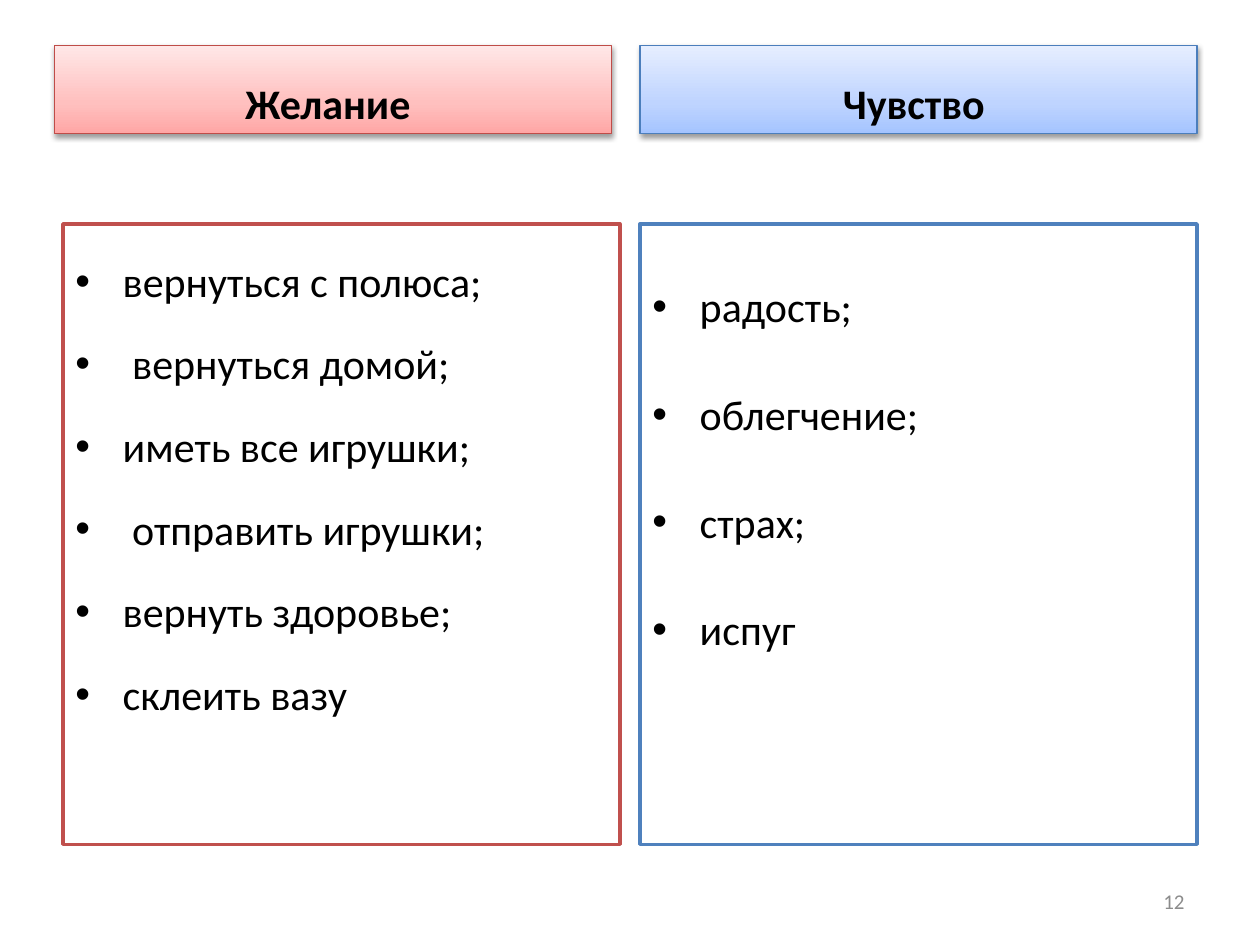
from copy import deepcopy

from lxml.etree import SubElement
from pptx import Presentation
from pptx.dml.color import RGBColor
from pptx.enum.shapes import MSO_SHAPE
from pptx.enum.text import MSO_ANCHOR, PP_ALIGN
from pptx.oxml.ns import qn
from pptx.util import Pt

BLACK = RGBColor(0x00, 0x00, 0x00)
WHITE = RGBColor(0xFF, 0xFF, 0xFF)
GRAY = RGBColor(0x8C, 0x8C, 0x8C)
RED = RGBColor(0xC0, 0x50, 0x4D)
DARK_RED = RGBColor(0xBF, 0x4C, 0x48)
BLUE = RGBColor(0x4F, 0x81, 0xBD)
DARK_BLUE = RGBColor(0x4B, 0x7E, 0xBC)
RED_FADE = (RGBColor(0xFF, 0xA6, 0xA5), RGBColor(0xFF, 0xC0, 0xBF),
            RGBColor(0xFF, 0xE7, 0xE7))
BLUE_FADE = (RGBColor(0xA4, 0xC4, 0xFF), RGBColor(0xBF, 0xD4, 0xFF),
             RGBColor(0xE6, 0xEE, 0xFF))

COLUMNS = [
    {"head": "Желание ", "head_x": 31, "list_x": 36, "spacing": 1.5,
     "fade": RED_FADE, "edge": DARK_RED, "frame": RED,
     "items": ["вернуться с полюса;", " вернуться домой;",
               "иметь все игрушки;", " отправить игрушки;",
               "вернуть здоровье;", "склеить вазу"]},
    {"head": "Чувство ", "head_x": 365.75, "list_x": 365.75, "spacing": 2,
     "fade": BLUE_FADE, "edge": DARK_BLUE, "frame": BLUE,
     "items": ["радость;", "облегчение;", "страх;", "испуг"]},
]
NUMBER = "12"

WIDTH = 318.25
HEAD_Y, HEAD_H = 26, 50.5
LIST_Y, LIST_H = 128, 354.5
INDENT = 27
STOPS = (0, 0.35, 1)
BODY = {"name": "Calibri", "size": Pt(24)}


def style(font, color, **values):
    for key, value in {**BODY, **values}.items():
        setattr(font, key, value)
    font.color.rgb = color


def add_box(slide, x, y, height, edge, weight, anchor):
    box = slide.shapes.add_shape(MSO_SHAPE.RECTANGLE, Pt(x), Pt(y),
                                 Pt(WIDTH), Pt(height))
    box.shadow.inherit = False
    box.line.color.rgb = edge
    box.line.width = Pt(weight)
    box.text_frame.word_wrap = True
    box.text_frame.vertical_anchor = anchor
    return box


def fade(box, colors):
    """Fill the box with a three-stop gradient running upwards."""
    box.fill.gradient()
    box.fill.gradient_angle = 90
    stops = box.element.spPr.find(".//" + qn("a:gsLst"))
    stops.append(deepcopy(stops[-1]))
    for stop, place, color in zip(box.fill.gradient_stops, STOPS, colors):
        stop.position = place
        stop.color.rgb = color


def add_shadow(box):
    effects = box.element.spPr.find(qn("a:effectLst"))
    shadow = SubElement(effects, qn("a:outerShdw"), blurRad=str(Pt(3.1)),
                        dist=str(Pt(1.6)), dir="5400000", rotWithShape="0")
    color = SubElement(shadow, qn("a:srgbClr"), val="000000")
    SubElement(color, qn("a:alpha"), val="38000")


def add_bullet(para):
    props = para._p.get_or_add_pPr()
    props.set("marL", str(Pt(INDENT)))
    props.set("indent", str(-Pt(INDENT)))
    SubElement(props, qn("a:buFont"), typeface="Arial")
    SubElement(props, qn("a:buChar"), char="•")


def add_head(slide, col):
    box = add_box(slide, col["head_x"], HEAD_Y, HEAD_H, col["edge"], 0.75,
                  MSO_ANCHOR.BOTTOM)
    fade(box, col["fade"])
    add_shadow(box)
    para = box.text_frame.paragraphs[0]
    para.text = col["head"]
    para.alignment = PP_ALIGN.CENTER
    style(para.runs[0].font, BLACK, bold=True)


def add_list(slide, col):
    box = add_box(slide, col["list_x"], LIST_Y, LIST_H, col["frame"], 2,
                  MSO_ANCHOR.TOP)
    box.fill.solid()
    box.fill.fore_color.rgb = WHITE
    frame = box.text_frame
    for i, item in enumerate(col["items"]):
        para = frame.add_paragraph() if i else frame.paragraphs[0]
        para.text = item
        para.alignment = PP_ALIGN.LEFT
        para.line_spacing = col["spacing"]
        para.space_before = Pt(4 if i else 0)
        add_bullet(para)
        style(para.runs[0].font, BLACK)


def add_number(slide):
    box = slide.shapes.add_textbox(Pt(516), Pt(500.5), Pt(168), Pt(28.75))
    box.text_frame.word_wrap = True
    box.text_frame.vertical_anchor = MSO_ANCHOR.MIDDLE
    para = box.text_frame.paragraphs[0]
    para.text = NUMBER
    para.alignment = PP_ALIGN.RIGHT
    style(para.runs[0].font, GRAY, size=Pt(12))


def main():
    deck = Presentation()
    deck.slide_width, deck.slide_height = Pt(720), Pt(540)
    slide = deck.slides.add_slide(deck.slide_layouts[6])
    for col in COLUMNS:
        add_head(slide, col)
        add_list(slide, col)
    add_number(slide)
    deck.save("out.pptx")


if __name__ == "__main__":
    main()
